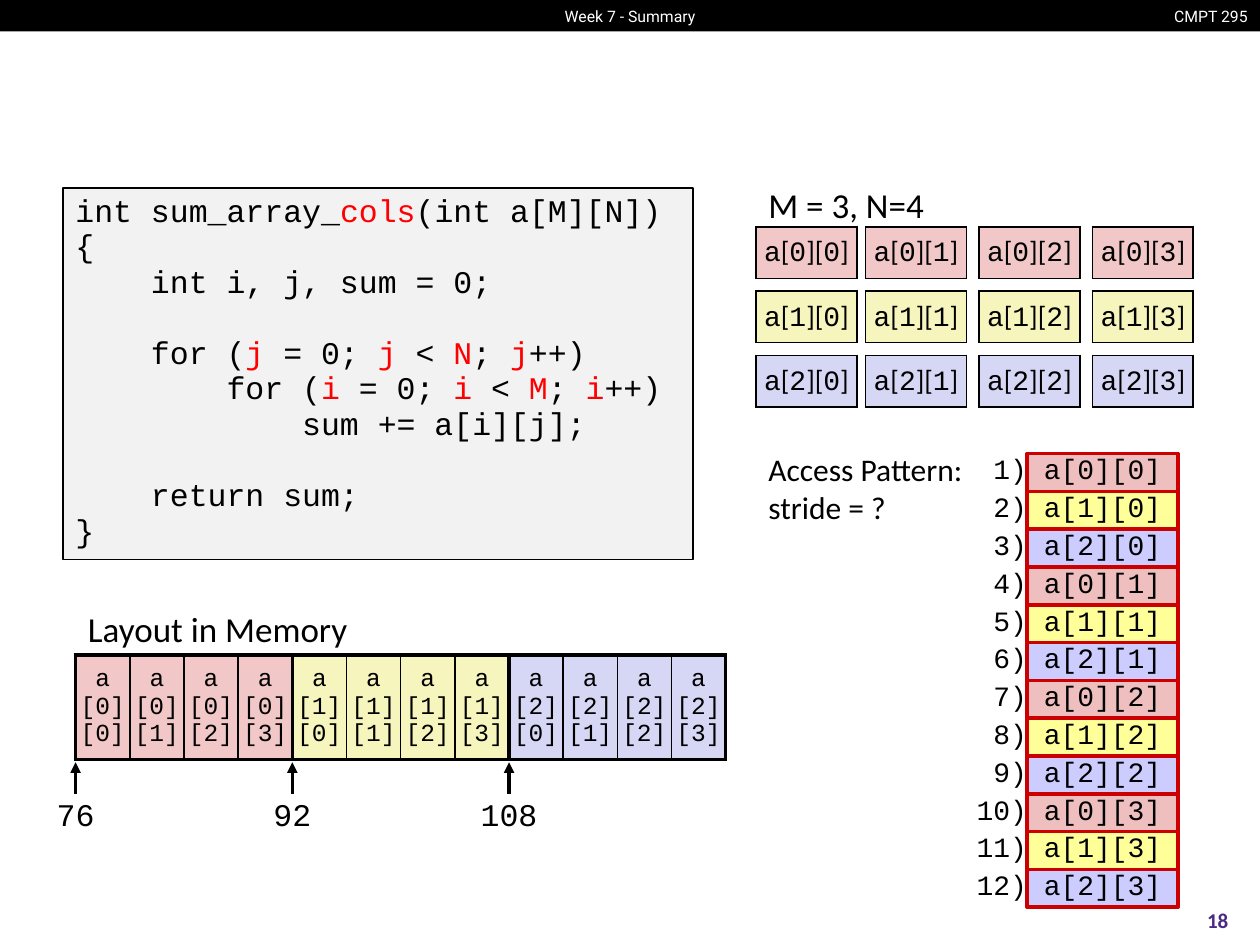
from dataclasses import dataclass

from lxml import etree
from pptx import Presentation
from pptx.dml.color import RGBColor
from pptx.enum.shapes import MSO_CONNECTOR, MSO_SHAPE
from pptx.enum.text import MSO_ANCHOR, PP_ALIGN
from pptx.oxml.ns import qn
from pptx.util import Inches, Pt

RECTANGLE = MSO_SHAPE.RECTANGLE
STRAIGHT = MSO_CONNECTOR.STRAIGHT
LEFT, CENTER, RIGHT = PP_ALIGN.LEFT, PP_ALIGN.CENTER, PP_ALIGN.RIGHT
TOP, MIDDLE = MSO_ANCHOR.TOP, MSO_ANCHOR.MIDDLE
NO_TABLE_STYLE = "{2D5ABB26-0587-4C30-8999-92F81FD0307C}"


@dataclass(frozen=True)
class Theme:
    """Colours, fonts and type sizes of the slide."""
    black: str = "000000"
    white: str = "FFFFFF"
    panel: str = "F2F2F2"
    highlight: str = "FF0000"
    access_line: str = "CC0000"
    page_number: str = "4B2A85"
    row_fills: tuple = ("F1C7C7", "F6F5BD", "D6D6F5")
    access_fills: tuple = ("EFBFBF", "FFFF99", "CCCCFF")
    header_font: str = "Roboto"
    body_font: str = "Calibri"
    code_font: str = "Courier New"
    header_size: int = 9
    page_size: int = 12
    memory_size: int = 14
    cell_size: int = 16
    code_size: int = 18
    label_size: int = 20


THEME = Theme()
ROWS, COLUMNS = 3, 4
FIRST_ADDRESS, ROW_BYTES = 76, 16
CODE_INDENT = 0.6
CODE_BLANK_LINE = 20.3
CODE_LINES = (
    (0, False, "int sum_array_|cols|(int a[M][N])"),
    (0, False, "{"),
    (1, False, "int i, j, sum = 0;"),
    (1, True, "for (|j| = 0; |j| < |N|; |j|++)"),
    (2, False, "for (|i| = 0; |i| < |M|; |i|++)"),
    (3, False, "sum += a[i][j];"),
    (1, True, "return sum;"),
    (0, False, "}"),
)


def format_run(run, size, font, color=THEME.black, bold=False):
    """Set the type of one run."""
    run.font.size = Pt(size)
    run.font.name = font
    run.font.bold = bold
    run.font.color.rgb = RGBColor.from_string(color)


def add_label(slide, box, text, size, font, color=THEME.black, align=LEFT,
              anchor=TOP, bold=False):
    """Place unwrapped text in a box."""
    text_frame = slide.shapes.add_textbox(*map(Inches, box)).text_frame
    text_frame.word_wrap = False
    text_frame.vertical_anchor = anchor
    text_frame.text = text
    for paragraph in text_frame.paragraphs:
        paragraph.alignment = align
        for run in paragraph.runs:
            format_run(run, size, font, color, bold)


def add_rectangle(slide, box, fill, line=None, width=1):
    """Place a flat rectangle, outlined if a line colour is given."""
    shape = slide.shapes.add_shape(RECTANGLE, *map(Inches, box))
    shape.shadow.inherit = False
    shape.fill.solid()
    shape.fill.fore_color.rgb = RGBColor.from_string(fill)
    if line:
        shape.line.color.rgb = RGBColor.from_string(line)
        shape.line.width = Pt(width)
    else:
        shape.line.fill.background()
    return shape


def add_plain_table(slide, left, top, widths, heights):
    """Place an unstyled table with the given column widths and row heights."""
    frame = slide.shapes.add_table(
        len(heights), len(widths), Inches(left), Inches(top),
        Inches(sum(widths)), Inches(sum(heights)))
    table = frame.table
    table.first_row = table.horz_banding = False
    table._tbl.tblPr.find(qn("a:tableStyleId")).text = NO_TABLE_STYLE
    for column, width in zip(table.columns, widths):
        column.width = Inches(width)
    for row, height in zip(table.rows, heights):
        row.height = Inches(height)
    return table


def fill_cell(cell, pieces=(), size=1, fill=None, align=CENTER, borders=None):
    """Set a cell's fill, borders and text pieces, every second in the body font."""
    cell.margin_left = cell.margin_right = cell.margin_top = cell.margin_bottom = 0
    cell.vertical_anchor = MIDDLE
    paragraph = cell.text_frame.paragraphs[0]
    paragraph.alignment = align
    for position, piece in enumerate(pieces):
        run = paragraph.add_run()
        run.text = piece
        format_run(run, size, THEME.body_font if position % 2 else THEME.code_font)
    if not pieces:
        etree.SubElement(paragraph._p, qn("a:endParaRPr"), sz=str(size * 100))
    if fill:
        cell.fill.solid()
        cell.fill.fore_color.rgb = RGBColor.from_string(fill)
    else:
        cell.fill.background()
    properties = cell._tc.get_or_add_tcPr()
    for index, (side, width) in enumerate((borders or {}).items()):
        line = etree.Element(qn(f"a:ln{side}"), w=str(Pt(width)))
        solid = etree.SubElement(line, qn("a:solidFill"))
        etree.SubElement(solid, qn("a:srgbClr"), val=THEME.black)
        properties.insert(index, line)


def add_header(slide, left, top, width, height):
    """Draw the header bar with the lecture and course names."""
    add_rectangle(slide, (left, top, width, height), THEME.black)
    for text, align in (("Week 7 - Summary", CENTER), ("CMPT 295", RIGHT)):
        add_label(slide, (left, top, width, height), text, THEME.header_size,
                  THEME.header_font, THEME.white, align, MIDDLE)


def add_code(slide, left, top, width, height):
    """Draw the code panel with its highlighted words."""
    panel = add_rectangle(slide, (left, top, width, height), THEME.panel, THEME.black)
    text_frame = panel.text_frame
    text_frame.word_wrap = True
    text_frame.vertical_anchor = TOP
    for index, (level, blank_before, line) in enumerate(CODE_LINES):
        paragraph = text_frame.add_paragraph() if index else text_frame.paragraphs[0]
        paragraph.alignment = LEFT
        paragraph.line_spacing = 0.94
        paragraph.space_before = Pt(CODE_BLANK_LINE if blank_before else 0)
        paragraph._p.get_or_add_pPr().set("marL", str(Inches(level * CODE_INDENT)))
        for position, piece in enumerate(line.split("|")):
            run = paragraph.add_run()
            run.text = piece
            color = THEME.highlight if position % 2 else THEME.black
            format_run(run, THEME.code_size, THEME.code_font, color)


def add_matrix(slide, left, top):
    """Draw the array as a grid of separate cells under its dimensions."""
    add_label(slide, (left, top, 1.46, 0.44), "M = 3, N=4", THEME.label_size, THEME.body_font)
    table = add_plain_table(slide, left, top + 0.39, (0.8, 0.07, 0.8, 0.1, 0.8, 0.1, 0.8),
                            (0.41, 0.1, 0.41, 0.1, 0.41))
    for row in range(2 * ROWS - 1):
        for column in range(2 * COLUMNS - 1):
            sides = ("" if row % 2 else "LR") + ("" if column % 2 else "TB")
            borders = dict.fromkeys(sides, 1)
            cell = table.cell(row, column)
            if row % 2 or column % 2:
                fill_cell(cell, borders=borders)
            else:
                pieces = ("a", "[", str(row // 2), "][", str(column // 2), "]")
                fill_cell(cell, pieces, THEME.cell_size, THEME.row_fills[row // 2], borders=borders)


def add_memory(slide, left, top):
    """Draw the row-major memory strip with the address of each row."""
    cell_width, strip_top, label_width = 0.43, top + 0.43, 0.9
    add_label(slide, (left, top, 2.33, 0.44), "Layout in Memory", THEME.label_size, THEME.body_font)
    table = add_plain_table(slide, left, strip_top, [cell_width] * (ROWS * COLUMNS), [0.83])
    for index in range(ROWS * COLUMNS):
        row, column = divmod(index, COLUMNS)
        borders = {"L": 1 if column else 2.25, "R": 2.25 if column == COLUMNS - 1 else 1,
                   "T": 2.25, "B": 2.25}
        fill_cell(table.cell(0, index), [f"a [{row}] [{column}]"], THEME.memory_size,
                  THEME.row_fills[row], borders=borders)
    for row in range(ROWS):
        center = left + row * COLUMNS * cell_width
        arrow = slide.shapes.add_connector(STRAIGHT, Inches(center), Inches(strip_top + 1.1),
                                           Inches(center), Inches(strip_top + 0.85))
        arrow.line.color.rgb = RGBColor.from_string(THEME.black)
        arrow.line.width = Pt(2)
        etree.SubElement(arrow.line._get_or_add_ln(), qn("a:tailEnd"), type="triangle")
        etree.SubElement(arrow._element.spPr, qn("a:effectLst"))
        add_label(slide, (center - label_width / 2, strip_top + 1.06, label_width, 0.4),
                  str(FIRST_ADDRESS + row * ROW_BYTES), THEME.code_size, THEME.code_font, align=CENTER)


def add_access_pattern(slide, left, top):
    """Draw the numbered column-by-column access order."""
    row_height, table_left, table_top = 0.3, left + 1.65, top + 0.08
    count = ROWS * COLUMNS
    for index in range(count):
        add_rectangle(slide, (table_left + 0.5, table_top + index * row_height, 1.2, row_height),
                      THEME.access_fills[index % ROWS], THEME.access_line, 2)
    add_label(slide, (left, top, 1.79, 0.71), "Access Pattern:\nstride = ?",
              THEME.code_size, THEME.body_font)
    table = add_plain_table(slide, table_left, table_top, (0.5, 1.2), [row_height] * count)
    for index in range(count):
        column, row = divmod(index, ROWS)
        fill_cell(table.cell(index, 0), [f"{index + 1})"], THEME.cell_size, align=RIGHT)
        fill_cell(table.cell(index, 1), [f"a[{row}][{column}]"], THEME.cell_size)


def main():
    """Build and save the slide."""
    presentation = Presentation()
    presentation.slide_width, presentation.slide_height = Inches(10), Inches(7.5)
    slide = presentation.slides.add_slide(presentation.slide_layouts[6])
    add_header(slide, 0, 0, 10, 0.25)
    add_code(slide, 0.5, 1.49, 5, 2.95)
    add_matrix(slide, 6, 1.41)
    add_memory(slide, 0.6, 4.77)
    add_access_pattern(slide, 6, 3.52)
    add_label(slide, (9.33, 7.1, 0.67, 0.4), "18", THEME.page_size, THEME.body_font,
              THEME.page_number, CENTER, MIDDLE, True)
    presentation.save("out.pptx")


if __name__ == "__main__":
    main()
